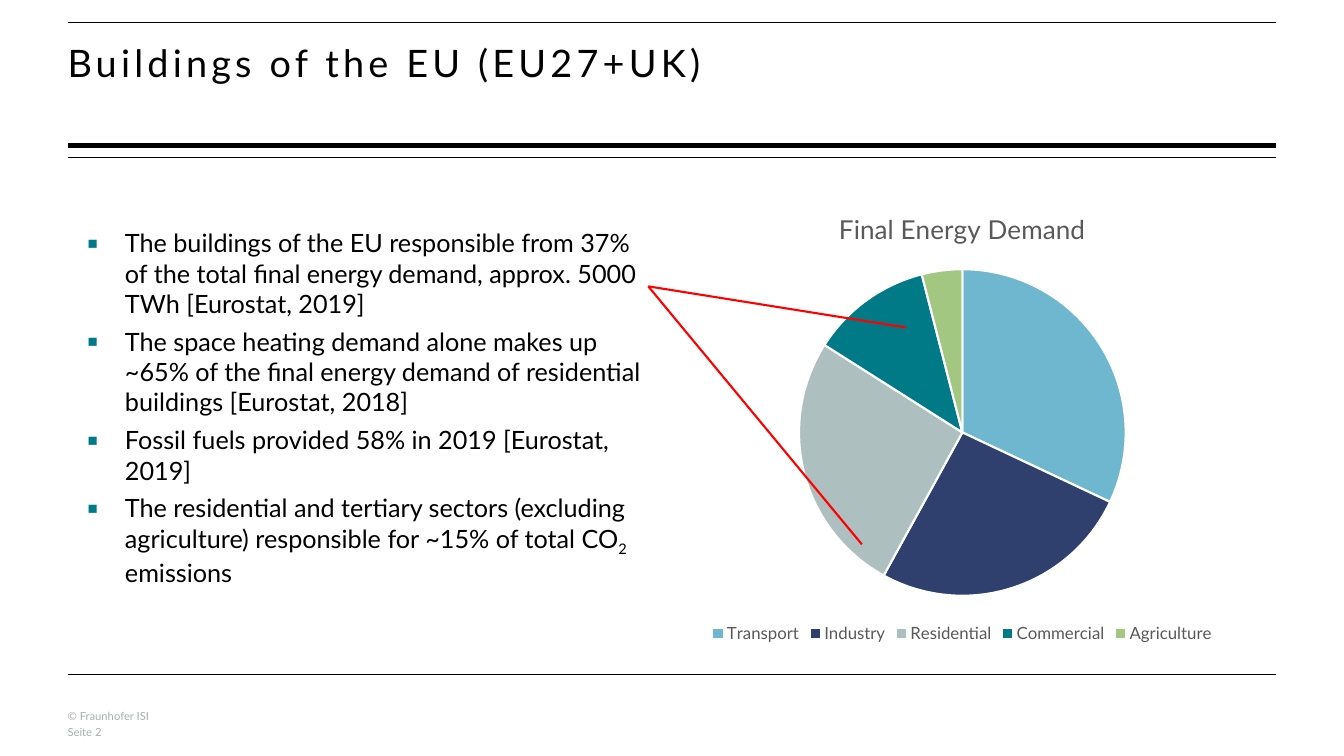
from lxml.etree import SubElement as Sub
from pptx import Presentation
from pptx.chart.data import CategoryChartData as Data
from pptx.dml.color import RGBColor
from pptx.enum.chart import XL_CHART_TYPE as Kind, XL_LEGEND_POSITION as Spot
from pptx.enum.shapes import MSO_CONNECTOR as Wire
from pptx.enum.text import MSO_ANCHOR as Anchor, MSO_AUTO_SIZE as Auto, PP_ALIGN as Align
from pptx.oxml.ns import qn
from pptx.util import Inches, Pt

WIDE, HIGH = 13.33, 7.5
LEFT, RIGHT = 0.67, 12.66
SPAN = RIGHT - LEFT
MID = 6.43
FACE = "Lato"
BLACK, GREY, PALE, TEAL, RED = "000000", "595959", "A8AFAF", "007A87", "FF0000"

POINTS = [
    [("The buildings of the EU responsible from 37% of the total final energy "
      "demand, approx. 5000 TWh [Eurostat, 2019]", False)],
    [("The space heating demand alone makes up ~65% of the final energy demand "
      "of residential buildings [Eurostat, 2018]", False)],
    [("Fossil fuels provided 58% in 2019 [Eurostat, 2019]", False)],
    [("The residential and tertiary sectors (excluding agriculture) responsible "
      "for ~15% of total CO", False), ("2", True), (" emissions", False)],
]
SECTORS = [
    ("Transport", 32, "6EB7CF"),
    ("Industry", 26, "2F3F6E"),
    ("Residential", 26, "AEBFC0"),
    ("Commercial", 12, TEAL),
    ("Agriculture", 4, "A2C780"),
]


def paint(code):
    return RGBColor.from_string(code)


def style(font, size, color):
    font.name, font.size, font.bold = FACE, Pt(size), False
    font.color.rgb = paint(color)


def write(para, text, size, color):
    run = para.add_run()
    run.text = text
    style(run.font, size, color)
    return run


def rule(slide, start, end, color, weight):
    ends = [Inches(n) for n in (*start, *end)]
    line = slide.shapes.add_connector(Wire.STRAIGHT, *ends)
    line.line.color.rgb = paint(color)
    line.line.width = Pt(weight)
    Sub(line._element.spPr, qn("a:effectLst"))


def clear(frame):
    frame.margin_left = frame.margin_right = 0
    frame.margin_top = frame.margin_bottom = 0
    frame.word_wrap = True
    frame.auto_size = Auto.NONE
    frame.vertical_anchor = Anchor.TOP
    return frame


def textbox(slide, box):
    shape = slide.shapes.add_textbox(*[Inches(n) for n in box])
    return clear(shape.text_frame)


def frame_rules(slide):
    for y, weight in ((0.22, 0.4), (1.44, 3.57), (1.56, 0.4), (6.69, 0.4)):
        rule(slide, (LEFT, y), (RIGHT, y), BLACK, weight)


def heading(slide, box):
    title = slide.shapes.title
    title.left, title.top, title.width, title.height = [Inches(n) for n in box]
    para = clear(title.text_frame).paragraphs[0]
    para.alignment = Align.LEFT
    run = write(para, "Buildings of the EU (EU27+UK)", 27, BLACK)
    run._r.get_or_add_rPr().set("spc", "300")


def footer(slide, box):
    x, y, w, h = box
    for row, text in enumerate(("© Fraunhofer ISI", "Seite 2")):
        frame = textbox(slide, (x, y + row * h, w, h))
        write(frame.paragraphs[0], text, 8, PALE)


def bullet(para):
    para.space_after = Pt(5.5)
    props = para._p.get_or_add_pPr()
    props.set("marL", str(Inches(0.38)))
    props.set("indent", str(-Inches(0.38)))
    Sub(Sub(props, qn("a:buClr")), qn("a:srgbClr"), val=TEAL)
    Sub(props, qn("a:buSzPct"), val="120000")
    Sub(props, qn("a:buFont"), typeface=FACE)
    Sub(props, qn("a:buChar"), char="▪")


def body(slide, box):
    frame = textbox(slide, box)
    for row, parts in enumerate(POINTS):
        para = frame.add_paragraph() if row else frame.paragraphs[0]
        bullet(para)
        for text, low in parts:
            run = write(para, text, 18, BLACK)
            if low:
                run._r.get_or_add_rPr().set("baseline", "-25000")


def place(chart, shares):
    area = chart._chartSpace.chart.plotArea
    old = area.find(qn("c:layout"))
    if old is not None:
        area.remove(old)
    layout = area.makeelement(qn("c:layout"))
    area.insert(0, layout)
    manual = Sub(layout, qn("c:manualLayout"))
    Sub(manual, qn("c:layoutTarget"), val="inner")
    for axis in "xy":
        Sub(manual, qn(f"c:{axis}Mode"), val="edge")
    for key, share in zip("xywh", shares):
        Sub(manual, qn(f"c:{key}"), val=str(share))


def demand(slide, box):
    name = "Final Energy Demand"
    data = Data()
    data.categories = [sector for sector, _, _ in SECTORS]
    data.add_series(name, [value for _, value, _ in SECTORS])
    sides = [Inches(n) for n in box]
    chart = slide.shapes.add_chart(Kind.PIE, *sides, data).chart
    style(chart.font, 10, BLACK)
    chart.has_title = True
    write(chart.chart_title.text_frame.paragraphs[0], name, 18.6, GREY)
    chart.chart_title.include_in_layout = False
    chart.has_legend = True
    chart.legend.position = Spot.BOTTOM
    chart.legend.include_in_layout = False
    style(chart.legend.font, 12, GREY)
    plot = chart.plots[0]
    plot.vary_by_categories = True
    for row, (_, _, color) in enumerate(SECTORS):
        form = plot.series[0].points[row].format
        form.fill.solid()
        form.fill.fore_color.rgb = paint(color)
        form.line.color.rgb = paint("FFFFFF")
        form.line.width = Pt(1.5)
    place(chart, (0.24, 0.17, 0.52, 0.72))


def callout(slide, box):
    x, y, w, h = box
    start = x, y + 0.21 * h
    for across, down in ((0.41, 0.3), (0.34, 0.775)):
        rule(slide, (x + across * w, y + down * h), start, RED, 1.5)


def main():
    deck = Presentation()
    deck.slide_width, deck.slide_height = Inches(WIDE), Inches(HIGH)
    slide = deck.slides.add_slide(deck.slide_layouts[5])
    pie = MID, 1.89, RIGHT - MID, 4.53
    frame_rules(slide)
    heading(slide, (LEFT, 0.39, SPAN, 1))
    footer(slide, (LEFT, 7.04, 2.62, 0.16))
    demand(slide, pie)
    callout(slide, pie)
    body(slide, (0.86, 2.26, MID - 0.86, 4.16))
    deck.save("out.pptx")


if __name__ == "__main__":
    main()
